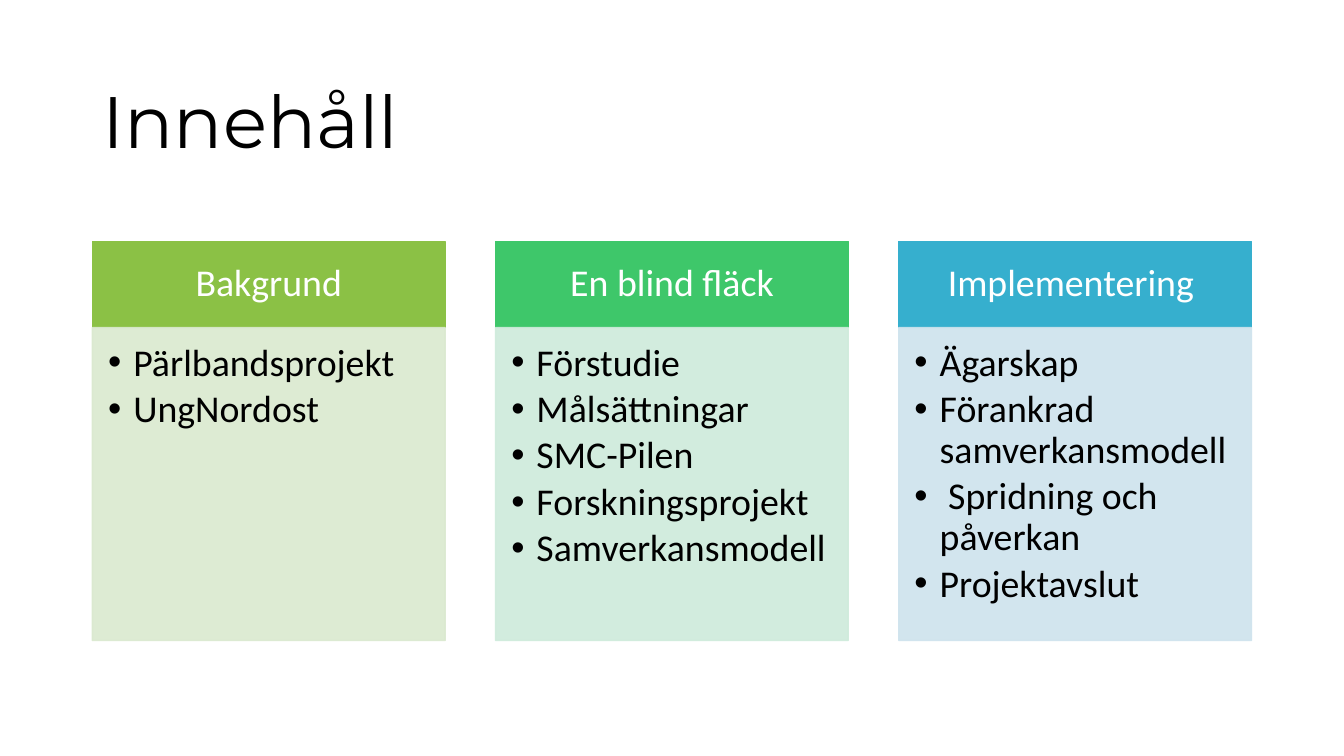
from dataclasses import dataclass

from pptx import Presentation
from pptx.dml.color import RGBColor as Color
from pptx.enum.shapes import MSO_SHAPE as Preset
from pptx.enum.text import MSO_ANCHOR as Anchor, PP_ALIGN as Align
from pptx.oxml.ns import qn
from pptx.util import Pt
from lxml.etree import SubElement

PX = 9525  # EMU per px, 96 px to the inch


@dataclass(frozen=True)
class Theme:
    black: str = "000000"
    white: str = "FFFFFF"
    title_font: str = "Montserrat"
    body_font: str = "Calibri"
    title_size: int = 52
    body_size: int = 27
    panel_opacity: int = 90


THEME = Theme()

# Heading, heading colour, panel colour, points
COLUMNS = [
    ("Bakgrund", "8BC145", "DAE9CF", ["Pärlbandsprojekt", "UngNordost"]),
    ("En blind fläck", "3EC76A", "CEEBDB",
     ["Förstudie", "Målsättningar", "SMC-Pilen", "Forskningsprojekt", "Samverkansmodell"]),
    ("Implementering ", "36AFCE", "CEE3ED",
     ["Ägarskap", "Förankrad samverkansmodell", " Spridning och påverkan", "Projektavslut"]),
]
LEFT, WIDTH, GAP = 88, 336, 48
HEAD_TOP, HEAD_HEIGHT, PANEL_HEIGHT = 230, 82, 298


def set_all(target, values):
    for name, value in values.items():
        setattr(target, name, value)


def set_frame(box, anchor, insets):
    sides = ("margin_left", "margin_top", "margin_right", "margin_bottom")
    margins = {side: inset * PX for side, inset in zip(sides, insets)}
    set_all(box.text_frame, {"word_wrap": True, "vertical_anchor": anchor, **margins})


def write(box, lines, font, size, color, align=Align.LEFT, space_after=0):
    frame = box.text_frame
    for index, line in enumerate(lines):
        para = frame.add_paragraph() if index else frame.paragraphs[0]
        set_all(para, {"alignment": align, "line_spacing": 0.9,
                       "space_before": Pt(0), "space_after": Pt(space_after)})
        span = para.add_run()
        span.text = line
        set_all(span.font, {"name": font, "size": Pt(size)})
        span.font.color.rgb = Color.from_string(color)


def add_bullets(box, indent):
    for para in box.text_frame.paragraphs:
        props = para._p.get_or_add_pPr()
        props.set("marL", str(indent * PX))
        props.set("indent", str(-indent * PX))
        SubElement(props, qn("a:buFont"), typeface="Arial")
        SubElement(props, qn("a:buChar"), char="•")


def add_block(page, left, top, height, color, opacity=100):
    box = page.shapes.add_shape(
        Preset.RECTANGLE, left * PX, top * PX, WIDTH * PX, height * PX)
    box.shadow.inherit = False
    box.line.width = Pt(1)
    for fill in (box.fill, box.line.fill):
        fill.solid()
        fill.fore_color.rgb = Color.from_string(color)
    if opacity < 100:
        for tint in box._element.spPr.iter(qn("a:srgbClr")):
            SubElement(tint, qn("a:alpha"), val=str(opacity * 1000))
    return box


def add_title(page, text):
    box = page.shapes.add_textbox(LEFT * PX, 59 * PX, 1104 * PX, 119 * PX)
    set_frame(box, Anchor.MIDDLE, (10, 5, 10, 5))
    write(box, [text], THEME.title_font, THEME.title_size, THEME.black)


def add_column(page, left, heading, head_color, panel_color, points):
    # Heading bar
    head = add_block(page, left, HEAD_TOP, HEAD_HEIGHT, head_color)
    set_frame(head, Anchor.MIDDLE, (20, 12, 20, 12))
    write(head, [heading], THEME.body_font, THEME.body_size, THEME.white, Align.CENTER)

    # Bulleted panel
    panel = add_block(page, left, HEAD_TOP + HEAD_HEIGHT, PANEL_HEIGHT,
                      panel_color, THEME.panel_opacity)
    set_frame(panel, Anchor.TOP, (15, 15, 20, 23))
    write(panel, points, THEME.body_font, THEME.body_size, THEME.black, space_after=4)
    add_bullets(panel, 24)


def main():
    deck = Presentation()
    set_all(deck, {"slide_width": 1280 * PX, "slide_height": 720 * PX})
    page = deck.slides.add_slide(deck.slide_layouts[6])
    add_title(page, "Innehåll")
    for index, column in enumerate(COLUMNS):
        add_column(page, LEFT + index * (WIDTH + GAP), *column)
    deck.save("out.pptx")


if __name__ == "__main__":
    main()
